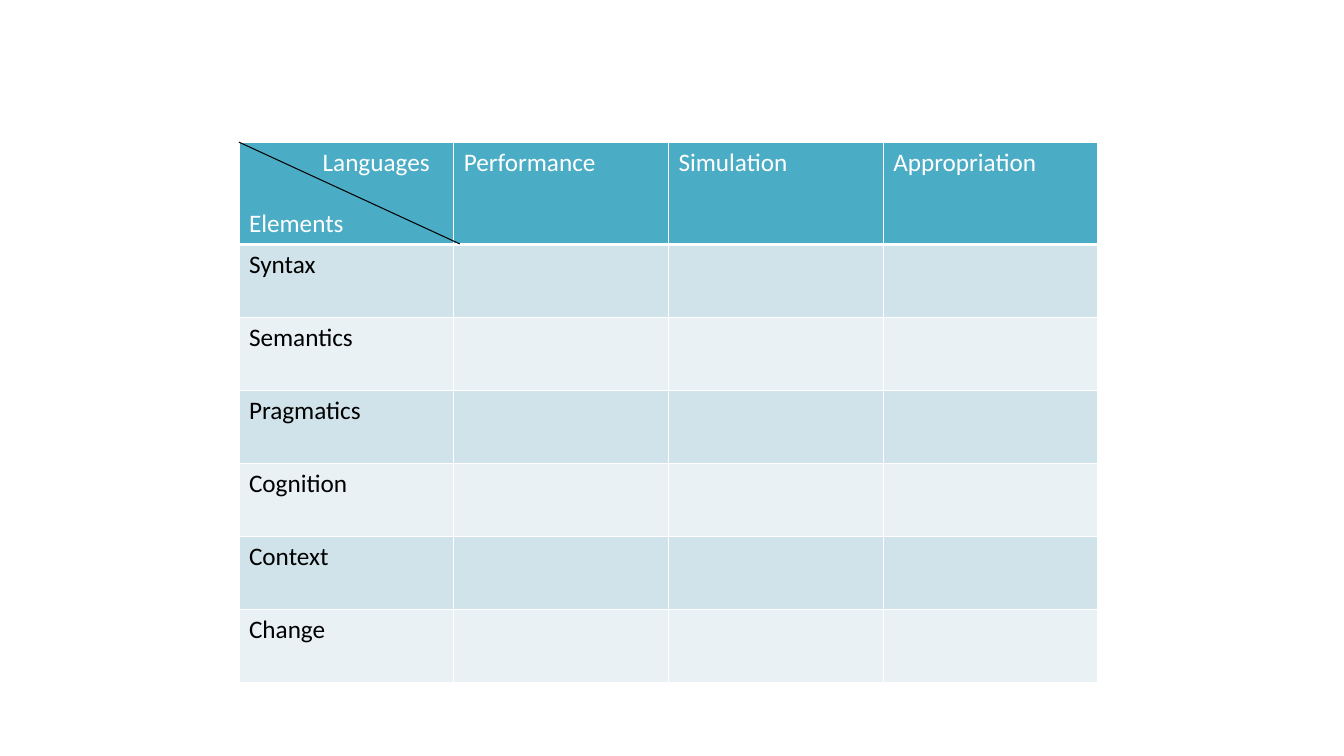
from dataclasses import dataclass

from lxml.etree import SubElement
from pptx import Presentation
from pptx.dml.color import RGBColor
from pptx.enum.shapes import MSO_CONNECTOR as Link
from pptx.oxml.ns import qn
from pptx.util import Inches, Pt

FONT, SIZE = "Calibri", 18
WHITE, BLACK, TEAL = "FFFFFF", "000000", "4BACC6"
BANDS = ("D0E3EA", "E9F1F5")
LEFT, TOP = 2.37, 1.41
COL, HEAD, ROW = 2.13, 1.0, 0.725
HEADS = ("Languages\nElements", "Performance", "Simulation", "Appropriation")
ITEMS = ("Syntax", "Semantics", "Pragmatics", "Cognition", "Context", "Change")


@dataclass
class Look:
    fill: str
    ink: str
    base: float  # bottom border in points


def color(code: str) -> RGBColor:
    return RGBColor.from_string(code)


def border(cell, base: float) -> None:
    """Draw white borders, with a bottom one of the given width."""
    props = cell._tc.get_or_add_tcPr()
    for tag, width in (("lnL", 1), ("lnR", 1), ("lnT", 1), ("lnB", base)):
        line = SubElement(props, qn(f"a:{tag}"), w=str(Pt(width)))
        fill = SubElement(line, qn("a:solidFill"))
        SubElement(fill, qn("a:srgbClr"), val=WHITE)


def style(cell, text: str, look: Look) -> None:
    border(cell, look.base)
    cell.fill.solid()
    cell.fill.fore_color.rgb = color(look.fill)
    cell.text_frame.text = text
    for para in cell.text_frame.paragraphs:
        para.font.size = Pt(SIZE)
        for run in para.runs:
            font = run.font
            font.name, font.size, font.bold = FONT, Pt(SIZE), False
            font.color.rgb = color(look.ink)


def add_grid(slide) -> None:
    rows = [HEADS] + [(item, "", "", "") for item in ITEMS]
    frame = slide.shapes.add_table(
        len(rows), len(HEADS), Inches(LEFT), Inches(TOP),
        Inches(COL * len(HEADS)), Inches(HEAD + ROW * len(ITEMS)))
    table = frame.table
    for col in table.columns:
        col.width = Inches(COL)
    for i, texts in enumerate(rows):
        table.rows[i].height = Inches(ROW if i else HEAD)
        look = Look(BANDS[(i - 1) % 2], BLACK, 1) if i else Look(TEAL, WHITE, 3)
        for j, text in enumerate(texts):
            style(table.cell(i, j), text, look)
    upper, lower = table.cell(0, 0).text_frame.paragraphs
    upper._p.get_or_add_pPr().set("marL", str(Inches(0.73)))
    lower.space_before = Pt(22)


def add_slash(slide) -> None:
    """Split the corner cell with a diagonal line."""
    line = slide.shapes.add_connector(
        Link.STRAIGHT, Inches(LEFT), Inches(TOP), Inches(4.56), Inches(2.42))
    line.line.color.rgb = color(BLACK)
    line.line.width = Pt(0.75)
    SubElement(line._element.spPr, qn("a:effectLst"))


def main() -> None:
    deck = Presentation()
    deck.slide_width, deck.slide_height = Inches(13.33), Inches(7.5)
    slide = deck.slides.add_slide(deck.slide_layouts[6])
    add_grid(slide)
    add_slash(slide)
    deck.save("out.pptx")


if __name__ == "__main__":
    main()
